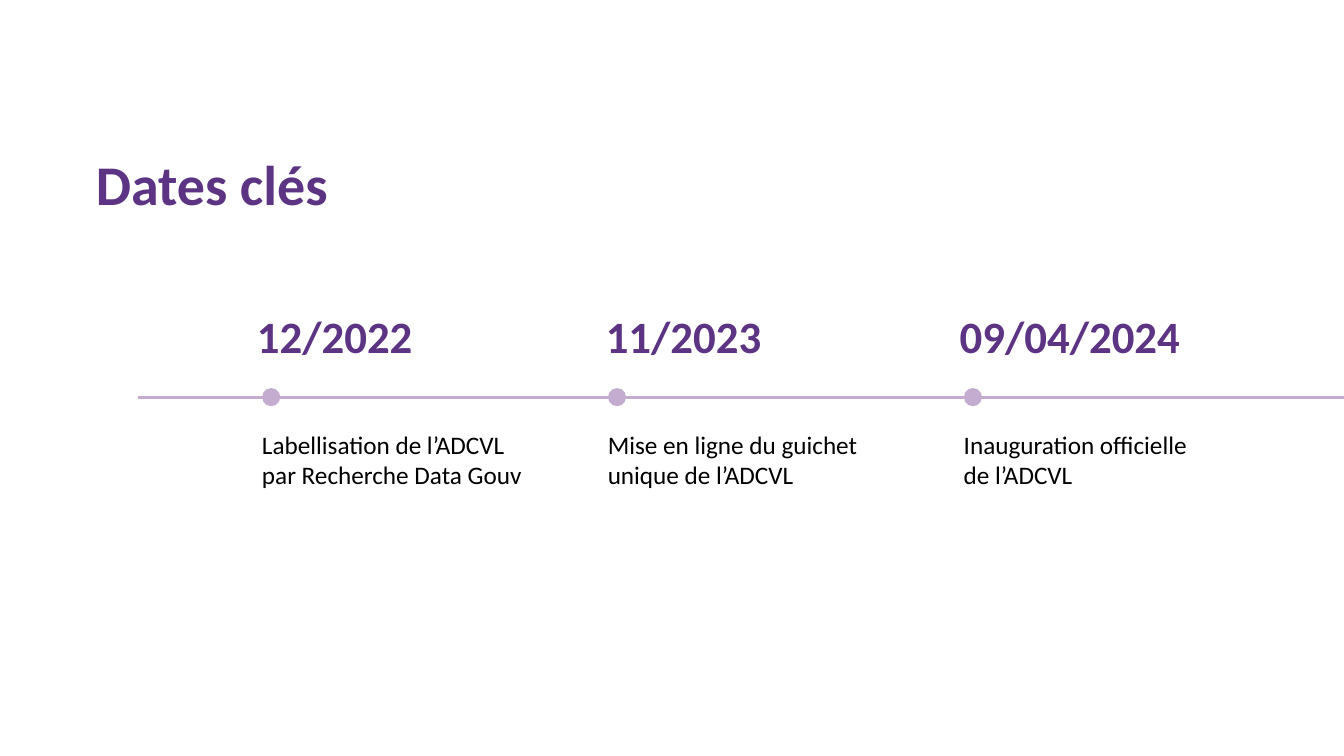
from pptx import Presentation
from pptx import util as u
from pptx.dml.color import RGBColor
from pptx.enum import shapes, text
from lxml import etree

PURPLE, LILAC, BLACK = "5C3483", "C3ACD0", "000000"
HEADING = {"name": "Calibri", "size": u.Pt(40), "bold": True}
DATE = {"name": "Calibri", "size": u.Pt(32), "bold": True}
LABEL = {"name": "Calibri", "size": u.Pt(18), "bold": False}
DOT = 0.18

# dot left, date left and width, label width, date, label
MILESTONES = [
    (2.6, 2.45, 1.94, 2.82, "12/2022", "Labellisation de l’ADCVL par Recherche Data Gouv"),
    (6.03, 5.91, 1.82, 3.07, "11/2023", "Mise en ligne du guichet unique de l’ADCVL"),
    (9.56, 9.42, 2.69, 2.65, "09/04/2024", "Inauguration officielle de l’ADCVL"),
]


def rgb(color):
    return RGBColor.from_string(color)


def place(sp, x, y, w, h):
    sp.left, sp.top, sp.width, sp.height = (u.Inches(v) for v in (x, y, w, h))


def write(sp, words, fmt, color):
    tf = sp.text_frame
    tf.word_wrap = True
    tf.auto_size = text.MSO_AUTO_SIZE.NONE
    tf.vertical_anchor = text.MSO_ANCHOR.TOP
    p = tf.paragraphs[0]
    p.alignment = text.PP_ALIGN.LEFT
    r = p.add_run()
    r.text = words
    for key, value in fmt.items():
        setattr(r.font, key, value)
    r.font.color.rgb = rgb(color)


def add_text(s, x, y, w, h, words, fmt, color):
    sp = s.shapes.add_textbox(0, 0, 0, 0)
    place(sp, x, y, w, h)
    write(sp, words, fmt, color)


def add_heading(s, x, y, w, h):
    place(s.shapes.title, x, y, w, h)
    write(s.shapes.title, "Dates clés", HEADING, PURPLE)


def add_axis(s, x, y, w):
    ln = s.shapes.add_connector(
        shapes.MSO_CONNECTOR.STRAIGHT,
        u.Inches(x), u.Inches(y), u.Inches(x + w), u.Inches(y))
    ln.line.color.rgb = rgb(LILAC)
    ln.line.width = u.Pt(2.25)
    ns = "http://schemas.openxmlformats.org/drawingml/2006/main"
    etree.SubElement(ln._element.spPr, f"{{{ns}}}effectLst")


def add_timeline(s, x, y, w):
    add_axis(s, x, y, w)
    for dot_x, date_x, date_w, label_w, date, label in MILESTONES:
        # Dot centred on the axis
        dot = s.shapes.add_shape(shapes.MSO_SHAPE.OVAL, 0, 0, 0, 0)
        place(dot, dot_x, y - DOT / 2, DOT, DOT)
        dot.shadow.inherit = False
        dot.fill.solid()
        dot.fill.fore_color.rgb = rgb(LILAC)
        dot.line.fill.background()
        # Date above, label below
        add_text(s, date_x, y - 0.93, date_w, 0.64, date, DATE, PURPLE)
        add_text(s, dot_x - 0.1, y + 0.27, label_w, 0.71, label, LABEL, BLACK)


def main():
    prs = Presentation()
    prs.slide_width, prs.slide_height = u.Inches(13.33), u.Inches(7.5)
    s = prs.slides.add_slide(prs.slide_layouts[5])
    add_heading(s, 0.85, 1.43, 4.23, 0.77)
    add_timeline(s, 1.37, 3.94, 11.96)
    prs.save("out.pptx")


if __name__ == "__main__":
    main()
